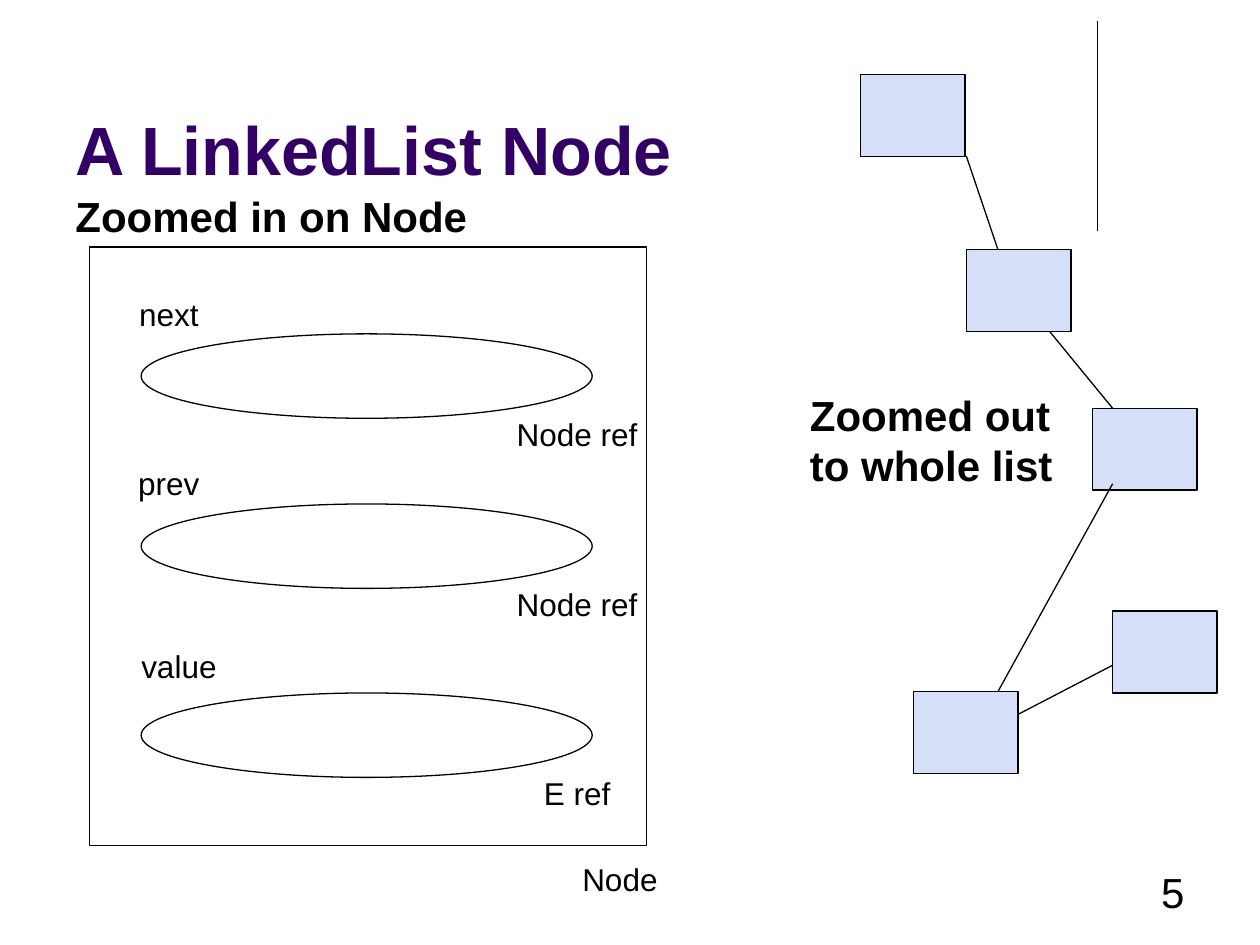
import pptx
import pptx.util
import pptx.dml.color
import pptx.enum.shapes
import pptx.enum.text
import pptx.oxml.ns
import lxml.etree
from dataclasses import dataclass

PX = 9144
SHAPE = pptx.enum.shapes.MSO_SHAPE
ANCHOR = pptx.enum.text.MSO_ANCHOR
ALIGN = pptx.enum.text.PP_ALIGN


@dataclass(frozen=True)
class Theme:
    font: str = "Arial"
    ink: str = "000000"
    title: str = "330066"
    node: str = "D5DFF7"
    title_size: int = 39
    heading_size: int = 24
    label_size: int = 18
    line_width: float = 0.75


THEME = Theme()


def rgb(value):
    return pptx.dml.color.RGBColor.from_string(value)


def emu(*lengths):
    return [length * PX for length in lengths]


def set_text(s, text, size, color=THEME.ink, bold=False, align=ALIGN.LEFT,
             anchor=ANCHOR.TOP, wrap=True):
    tf = s.text_frame
    frame_format = {"word_wrap": wrap, "vertical_anchor": anchor,
                    "auto_size": pptx.enum.text.MSO_AUTO_SIZE.NONE}
    for name, value in frame_format.items():
        setattr(tf, name, value)
    p = tf.paragraphs[0]
    p.alignment = align
    r = p.add_run()
    r.text = text
    font_format = {"name": THEME.font, "size": pptx.util.Pt(size), "bold": bold}
    for name, value in font_format.items():
        setattr(r.font, name, value)
    r.font.color.rgb = rgb(color)


def add_text(slide, box, text, size, **options):
    s = slide.shapes.add_textbox(*emu(*box))
    set_text(s, text, size, **options)


def add_label(slide, x, y, text):
    add_text(slide, (x, y, 92, 43), text, THEME.label_size,
             align=ALIGN.CENTER, anchor=ANCHOR.MIDDLE, wrap=False)


def set_line(s):
    s.line.color.rgb = rgb(THEME.ink)
    s.line.width = pptx.util.Pt(THEME.line_width)


def add_outline(slide, kind, box, fill=None):
    s = slide.shapes.add_shape(kind, *emu(*box))
    s.shadow.inherit = False
    if fill:
        s.fill.solid()
        s.fill.fore_color.rgb = rgb(fill)
    else:
        s.fill.background()
    set_line(s)


def add_line(slide, x1, y1, x2, y2):
    s = slide.shapes.add_connector(
        pptx.enum.shapes.MSO_CONNECTOR.STRAIGHT, *emu(x1, y1, x2, y2))
    set_line(s)
    lxml.etree.SubElement(s._element.spPr, pptx.oxml.ns.qn("a:effectLst"))


def add_title(slide, box, text):
    s = slide.shapes.title
    for name, value in zip(("left", "top", "width", "height"), emu(*box)):
        setattr(s, name, value)
    set_text(s, text, THEME.title_size, color=THEME.title, bold=True,
             anchor=ANCHOR.BOTTOM)


def add_heading(slide, box, text):
    add_text(slide, box, text, THEME.heading_size, bold=True, anchor=ANCHOR.BOTTOM)


def add_node_detail(slide, box):
    x, y, width, height = box
    add_outline(slide, SHAPE.RECTANGLE, box)
    fields = (("next", "Node ref", 17, 32, 69),
              ("prev", "Node ref", 17, 166, 204),
              ("value", "E ref", 25, 311, 354))
    for name, kind, name_x, name_y, oval_y in fields:
        add_outline(slide, SHAPE.OVAL, (x + 41, y + oval_y, 358, 67))
        add_label(slide, x + name_x, y + name_y, name)
        add_label(slide, x + 341, y + oval_y + 58, kind)
    add_label(slide, x + width - 67, y + height + 5, "Node")


def add_list_overview(slide, box):
    x, y, width, height = box
    node_w, node_h = 83, 65
    nodes = ((0, 0), (84, 139), (184, 265),
             (width - node_w, 426), (42, height - node_h))
    for node_x, node_y in nodes:
        add_outline(slide, SHAPE.RECTANGLE,
                    (x + node_x, y + node_y, node_w, node_h), THEME.node)
    links = ((84, 65, 109, 139), (150, 204, 200, 265),
             (200, 325, 109, 490), (125, 508, 200, 469))
    for x1, y1, x2, y2 in links:
        add_line(slide, x + x1, y + y1, x + x2, y + y2)


def main():
    prs = pptx.Presentation()
    prs.slide_width, prs.slide_height = emu(1000, 750)
    slide = prs.slides.add_slide(prs.slide_layouts[5])
    add_line(slide, 871, 17, 871, 183)
    add_title(slide, (50, 30, 900, 125), "A LinkedList Node")
    add_heading(slide, (50, 126, 442, 70), "Zoomed in on Node")
    add_heading(slide, (633, 104, 250, 290), "Zoomed out to whole list")
    add_node_detail(slide, (71, 196, 442, 475))
    add_list_overview(slide, (683, 59, 283, 555))
    add_text(slide, (717, 683, 233, 50), "5", THEME.heading_size, align=ALIGN.RIGHT)
    prs.save("out.pptx")


if __name__ == "__main__":
    main()
